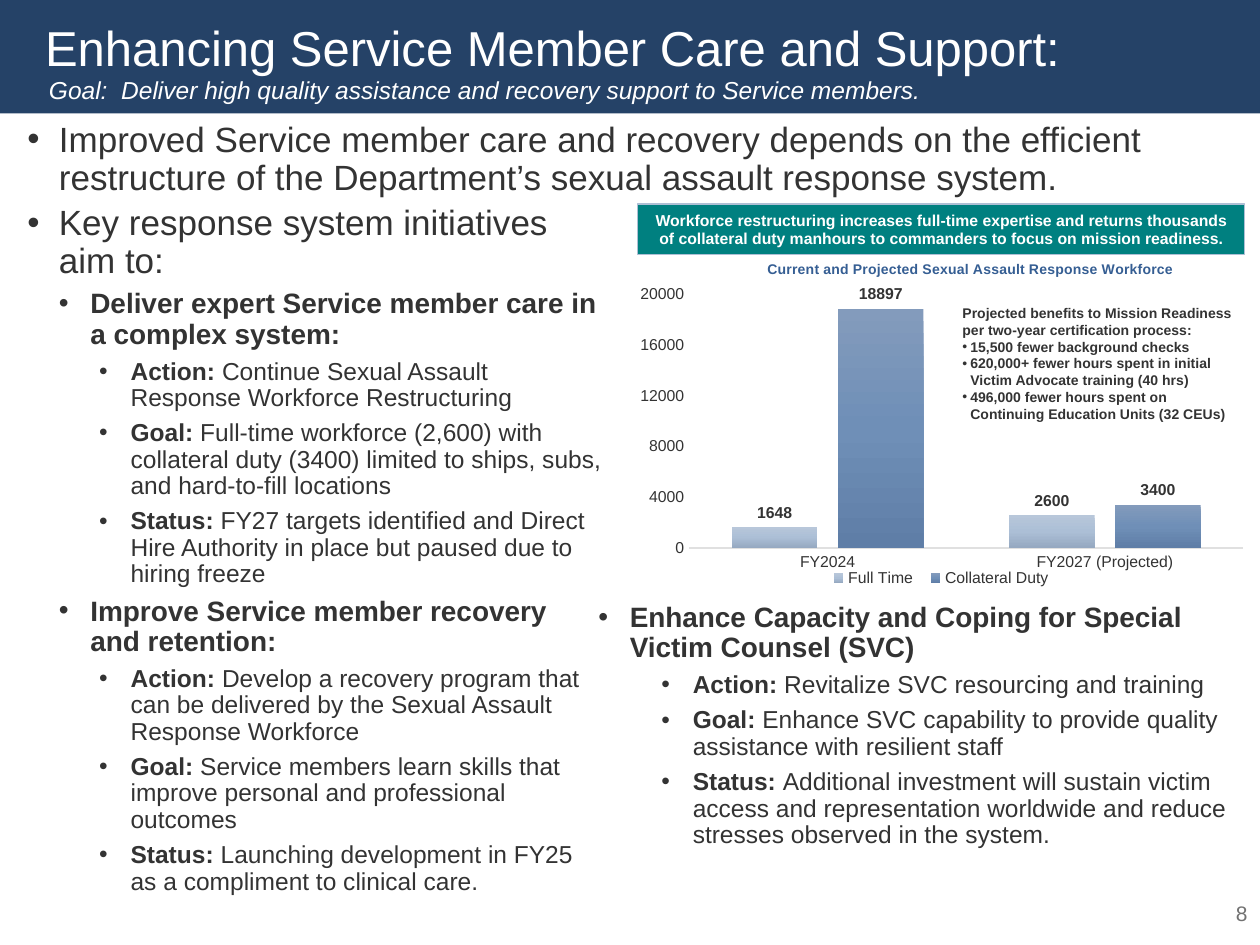
from lxml import etree
from pptx import Presentation
from pptx.chart.data import CategoryChartData
from pptx.dml.color import RGBColor
from pptx.enum.chart import (XL_CHART_TYPE, XL_LABEL_POSITION,
                             XL_LEGEND_POSITION, XL_TICK_MARK)
from pptx.enum.shapes import MSO_SHAPE
from pptx.enum.text import MSO_ANCHOR, PP_ALIGN
from pptx.oxml.ns import qn
from pptx.util import Pt

COLUMNS = XL_CHART_TYPE.COLUMN_CLUSTERED
OUTSIDE = XL_LABEL_POSITION.OUTSIDE_END
BOTTOM = XL_LEGEND_POSITION.BOTTOM
NO_TICK = XL_TICK_MARK.NONE
RECT = MSO_SHAPE.RECTANGLE
TOP, MIDDLE = MSO_ANCHOR.TOP, MSO_ANCHOR.MIDDLE
LEFT, CENTER, RIGHT = PP_ALIGN.LEFT, PP_ALIGN.CENTER, PP_ALIGN.RIGHT

NAVY, TEAL, DARK, WHITE = "254267", "008080", "333333", "FFFFFF"


def rgb(value):
    return RGBColor.from_string(value)


def para(*runs, size=14, color=DARK, bold=False, italic=False, align=LEFT,
         indent=0, hang=18, spacing=0.9, before=0, bullet=False):
    """Describe a paragraph; each run is text or a (text, bold) pair."""
    runs = [r if isinstance(r, tuple) else (r, bold) for r in runs]
    return dict(runs=runs, size=size, color=color, italic=italic, align=align,
                indent=indent, hang=hang, spacing=spacing, before=before,
                bullet=bullet)


def topic(text, indent, before=5):
    return para(text, size=16, bold=True, indent=indent, before=before,
                bullet=True)


def details(indent, **items):
    return [para((f"{name}: ", True), text, indent=indent, before=5,
                 bullet=True) for name, text in items.items()]


def set_layout(element, before_tag, inner=False, **place):
    """Give a chart part a fixed place, in fractions of the chart."""
    for old in element.findall(qn("c:layout")):
        element.remove(old)
    layout = etree.Element(qn("c:layout"))
    manual = etree.SubElement(layout, qn("c:manualLayout"))
    if inner:
        etree.SubElement(manual, qn("c:layoutTarget"), val="inner")
    for mode in ("xMode", "yMode"):
        etree.SubElement(manual, qn(f"c:{mode}"), val="edge")
    for key, value in place.items():
        etree.SubElement(manual, qn(f"c:{key}"), val=str(value))
    following = element.find(qn(before_tag))
    following.addprevious(layout)


class Deck:
    font = "Arial"

    def __init__(self, width, height):
        self.prs = Presentation()
        self.prs.slide_width, self.prs.slide_height = Pt(width), Pt(height)
        self.s = self.prs.slides.add_slide(self.prs.slide_layouts[6])

    def style(self, font, size, color, bold=False, italic=False):
        font.name, font.size = self.font, Pt(size)
        font.bold, font.italic = bold, italic
        font.color.rgb = rgb(color)

    def fill_text(self, sp, paras, anchor):
        tf = sp.text_frame
        tf.word_wrap, tf.vertical_anchor = True, anchor
        for i, item in enumerate(paras):
            p = tf.paragraphs[0] if i == 0 else tf.add_paragraph()
            p.alignment, p.line_spacing = item["align"], item["spacing"]
            if item["before"]:
                p.space_before = Pt(item["before"])
            if item["bullet"]:
                pPr = p._p.get_or_add_pPr()
                pPr.set("marL", str(Pt(item["indent"])))
                pPr.set("indent", str(-Pt(item["hang"])))
                etree.SubElement(pPr, qn("a:buFont"), typeface=self.font)
                etree.SubElement(pPr, qn("a:buChar"), char="•")
            for text, bold in item["runs"]:
                r = p.add_run()
                r.text = text
                self.style(r.font, item["size"], item["color"], bold,
                           item["italic"])

    def text(self, x, y, w, h, *paras, anchor=TOP):
        sp = self.s.shapes.add_textbox(Pt(x), Pt(y), Pt(w), Pt(h))
        self.fill_text(sp, paras, anchor)

    def box(self, x, y, w, h, fill, *paras, line=None):
        sp = self.s.shapes.add_shape(RECT, Pt(x), Pt(y), Pt(w), Pt(h))
        sp.shadow.inherit = False
        sp.fill.solid()
        sp.fill.fore_color.rgb = rgb(fill)
        if line:
            sp.line.color.rgb, sp.line.width = rgb(line), Pt(0.75)
        else:
            sp.line.fill.background()
        self.fill_text(sp, paras, MIDDLE)

    def gradient(self, fill, colors):
        """Fill from top to bottom with evenly spaced colours."""
        fill.gradient()
        fill.gradient_angle = 270
        stops = fill._fill._gradFill.find(qn("a:gsLst"))
        for old in list(stops):
            stops.remove(old)
        for i, color in enumerate(colors):
            pos = str(100000 * i // (len(colors) - 1))
            stop = etree.SubElement(stops, qn("a:gs"), pos=pos)
            etree.SubElement(stop, qn("a:srgbClr"), val=color)

    def chart(self, x, y, w, h, title, cats, series):
        data = CategoryChartData()
        data.categories = cats
        for name, values, _ in series:
            data.add_series(name, values)
        chart = self.s.shapes.add_chart(COLUMNS, Pt(x), Pt(y), Pt(w), Pt(h),
                                        data).chart
        self.style(chart.font, 10, DARK)

        # Title and legend
        chart.has_title = True
        p = chart.chart_title.text_frame.paragraphs[0]
        r = p.add_run()
        r.text = title
        self.style(r.font, 8, "355E93", bold=True)
        chart.chart_title.include_in_layout = False
        set_layout(chart.chart_title._element, "c:overlay", x=0.22, y=0.05)
        chart.has_legend = True
        chart.legend.position = BOTTOM
        chart.legend.include_in_layout = False
        self.style(chart.legend.font, 9, DARK)
        set_layout(chart.legend._element, "c:overlay",
                   x=0.31, y=0.87, w=0.38, h=0.06)

        # Axes
        for axis in (chart.category_axis, chart.value_axis):
            axis.major_tick_mark = axis.minor_tick_mark = NO_TICK
            axis.has_major_gridlines = False
            self.style(axis.tick_labels.font, 9, DARK)
        line = chart.category_axis.format.line
        line.color.rgb, line.width = rgb("E0E0E0"), Pt(1)
        axis = chart.value_axis
        axis.minimum_scale, axis.maximum_scale = 0, 20000
        axis.major_unit = 4000
        axis.format.line.fill.background()

        # Columns and their values
        plot = chart.plots[0]
        plot.gap_width, plot.overlap = 100, -24
        plot.vary_by_categories = False
        for ser, (_, _, colors) in zip(plot.series, series):
            self.gradient(ser.format.fill, colors)
            labels = ser.data_labels
            labels.show_value, labels.position = True, OUTSIDE
            self.style(labels.font, 9, DARK, bold=True)
        set_layout(chart._chartSpace.chart.plotArea, "c:barChart", inner=True,
                   x=0.1, y=0.15, w=0.88, h=0.67)


def main():
    deck = Deck(720, 540)

    # Heading band
    deck.box(0, 0, 720, 64.8, NAVY)
    deck.text(18.7, 10, 601, 47.5, para(
        "Enhancing Service Member Care and Support:", size=28, color=WHITE))
    deck.text(20.9, 41, 598, 26, para(
        "Goal:  Deliver high quality assistance and recovery support to "
        "Service members.", color=WHITE, italic=True))

    # Lead statement
    deck.text(8.6, 66.2, 683, 65, para(
        "Improved Service member care and recovery depends on the efficient "
        "restructure of the Department’s sexual assault response system.",
        size=20, indent=18, bullet=True))

    # Initiatives, left column
    deck.text(
        8.6, 113.8, 343.4, 400,
        para("Key response system initiatives aim to:", size=20, indent=18,
             bullet=True),
        topic("Deliver expert Service member care in a complex system:", 36),
        *details(
            59,
            Action="Continue Sexual Assault Response Workforce Restructuring",
            Goal="Full-time workforce (2,600) with collateral duty (3400) "
                 "limited to ships, subs, and hard-to-fill locations",
            Status="FY27 targets identified and Direct Hire Authority in "
                   "place but paused due to hiring freeze"),
        topic("Improve Service member recovery and retention:", 36),
        *details(
            59,
            Action="Develop a recovery program that can be delivered by the "
                   "Sexual Assault Response Workforce",
            Goal="Service members learn skills that improve personal and "
                 "professional outcomes",
            Status="Launching development in FY25 as a compliment to "
                   "clinical care."))

    # Initiative, right column
    deck.text(
        298.8, 341.3, 414.7, 150,
        topic("Enhance Capacity and Coping for Special Victim Counsel (SVC)",
              54, before=0),
        *details(
            90,
            Action="Revitalize SVC resourcing and training",
            Goal="Enhance SVC capability to provide quality assistance with "
                 "resilient staff",
            Status="Additional investment will sustain victim access and "
                   "representation worldwide and reduce stresses observed "
                   "in the system."))

    # Workforce chart with its banner
    deck.box(364.3, 116.6, 347, 28.8, TEAL, para(
        "Workforce restructuring increases full-time expertise and returns "
        "thousands of collateral duty manhours to commanders to focus on "
        "mission readiness.", size=9, color=WHITE, bold=True, align=CENTER,
        spacing=1), line="AEBFD4")
    deck.chart(
        357.8, 136, 360, 216,
        "Current and Projected Sexual Assault Response Workforce",
        ["FY2024", "FY2027 (Projected)"],
        [("Full Time", (1648, 2600), ("B8C7DA", "ACBFD6", "96A9C1")),
         ("Collateral Duty", (18897, 3400), ("839BBC", "6F8FB7", "5F7EA7"))])

    # Benefits beside the columns
    note = dict(size=8, bold=True, spacing=1)
    benefits = ("15,500 fewer background checks",
                "620,000+ fewer hours spent in initial Victim Advocate "
                "training (40 hrs)",
                "496,000 fewer hours spent on Continuing Education Units "
                "(32 CEUs)")
    deck.text(542.9, 170.6, 175, 74.9,
              para("Projected benefits to Mission Readiness per two-year "
                   "certification process:", **note),
              *[para(b, indent=4.5, hang=4.5, bullet=True, **note)
                for b in benefits])

    # Page number
    deck.text(620, 507.6, 100, 28.8,
              para("8", size=12, color="717171", align=RIGHT, spacing=1),
              anchor=MIDDLE)

    deck.prs.save("out.pptx")


if __name__ == "__main__":
    main()
